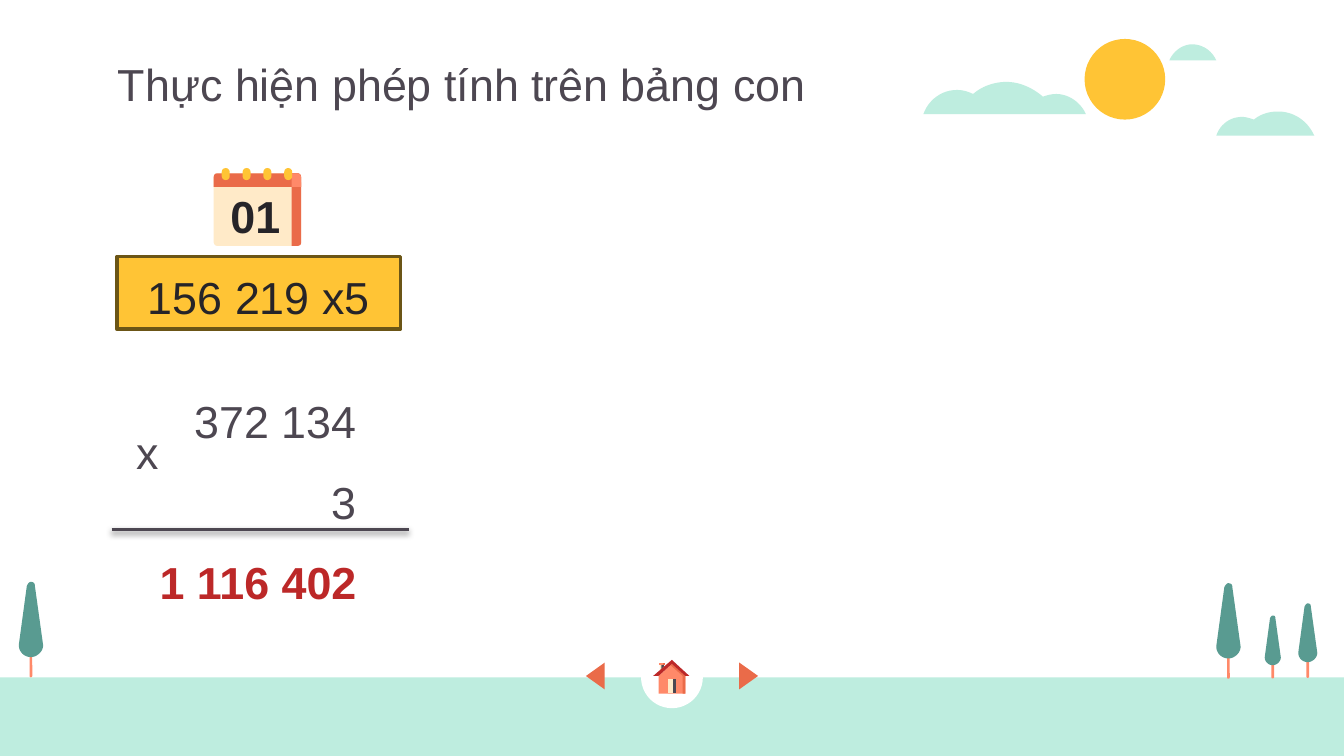
from pptx import Presentation
from pptx.dml.color import RGBColor
from pptx.enum.shapes import MSO_CONNECTOR, MSO_SHAPE as Shape
from pptx.enum.text import MSO_ANCHOR as Anchor, PP_ALIGN as Align
from pptx.oxml import parse_xml
from pptx.util import Inches, Pt

MINT, YELLOW, CREAM, WHITE = "BEEDDF", "FFC435", "FFEAC8", "FFFFFF"
CORAL, ORANGE, RED, GREEN = "FF8969", "EA6B49", "BC2828", "599B91"
GREY, INK, OLIVE = "4D4751", "262428", "6B5516"
DRAWING_NS = "http://schemas.openxmlformats.org/drawingml/2006/main"

CLOUDS = [
    [(7.49, 0.61), (7.4, 0.61, 7.31, 0.64, 7.24, 0.7),
     (7.2, 0.68, 7.16, 0.67, 7.12, 0.67), (7.01, 0.67, 6.91, 0.74, 6.87, 0.85),
     (8.08, 0.85), (8.04, 0.76, 7.95, 0.7, 7.86, 0.7),
     (7.82, 0.7, 7.79, 0.71, 7.76, 0.72), (7.68, 0.65, 7.58, 0.61, 7.49, 0.61)],
    [(8.87, 0.33), (8.8, 0.33, 8.73, 0.38, 8.7, 0.45),
     (9.05, 0.45), (9.02, 0.38, 8.95, 0.33, 8.87, 0.33)],
    [(9.51, 0.83), (9.44, 0.83, 9.38, 0.85, 9.33, 0.89),
     (9.3, 0.88, 9.27, 0.87, 9.24, 0.87), (9.16, 0.87, 9.08, 0.92, 9.05, 1.01),
     (9.78, 1.01), (9.73, 0.9, 9.63, 0.83, 9.51, 0.83)],
]
CROWN = [(0, 0), (-0.01, 0, -0.02, 0.01, -0.03, 0.03), (-0.09, 0.47),
         (-0.09, 0.52, -0.05, 0.56, 0, 0.56), (0.05, 0.56, 0.1, 0.51, 0.09, 0.46),
         (0.03, 0.03), (0.03, 0.01, 0.02, 0, 0, 0)]
TREES = [(9.47, 4.58, 0.66), (9.73, 4.49, 0.78), (0.23, 4.33, 1), (9.14, 4.34, 1)]
HOUSE = [
    (CREAM, [(4.91, 4.95), (4.91, 4.99), (4.94, 4.96), (4.94, 4.95)]),
    (GREY, [(4.92, 4.95), (4.92, 4.98), (4.94, 4.96), (4.94, 4.95)]),
    (CORAL, [(5, 4.94), (4.9, 5.03), (4.9, 5.16), (5.1, 5.16), (5.1, 5.03)]),
    (ORANGE, [(5, 4.94), (4.99, 4.95), (5.08, 5.03), (5.08, 5.16), (5.1, 5.16),
              (5.1, 5.03)]),
    (CORAL, [(4.9, 4.93), (4.9, 4.95), (4.95, 4.95), (4.95, 4.93)]),
    (CREAM, [(4.97, 5.05), (4.97, 5.16), (5.03, 5.16), (5.03, 5.05)]),
    (GREY, [(5.01, 5.05), (5.01, 5.16), (5.03, 5.16), (5.03, 5.05)]),
    (RED, [(5, 4.91), (4.86, 5.03), (4.9, 5.03), (5, 4.94), (5.1, 5.03),
           (5.13, 5.03)]),
    (ORANGE, [(4.93, 4.93), (4.93, 4.95), (4.95, 4.95), (4.95, 4.93)]),
]
CALENDAR_SIDE = [(2.17, 1.29), (2.17, 1.83), (2.21, 1.83),
                 (2.23, 1.83, 2.24, 1.82, 2.24, 1.81), (2.24, 1.32),
                 (2.24, 1.3, 2.23, 1.29, 2.21, 1.29)]


def color(value):
    """Turn a hex string into a colour."""
    return RGBColor.from_string(value)


def set_format(target, values):
    """Set each named attribute on the target."""
    for name, value in values.items():
        setattr(target, name, value)


def paint(shape, fill):
    """Give a shape a flat fill with no line or shadow."""
    shape.shadow.inherit = False
    shape.fill.solid()
    shape.fill.fore_color.rgb = color(fill)
    shape.line.fill.background()


def add_preset(shapes, kind, area, fill, rotation=0, roundness=None):
    """Add a flat preset shape."""
    shape = shapes.add_shape(kind, *map(Inches, area))
    paint(shape, fill)
    shape.rotation = rotation
    if roundness is not None:
        shape.adjustments[0] = roundness


def trace(path, steps=12):
    """Turn a path of points and cubic curves into plain points."""
    points = []
    for segment in path:
        if len(segment) == 2:
            points.append(segment)
            continue
        nodes = [points[-1], segment[:2], segment[2:4], segment[4:]]
        for step in range(1, steps + 1):
            t = step / steps
            weights = ((1 - t) ** 3, 3 * t * (1 - t) ** 2, 3 * t * t * (1 - t), t ** 3)
            points.append(tuple(sum(w * node[axis] for w, node in zip(weights, nodes))
                                for axis in (0, 1)))
    return points


def add_outline(shapes, path, fill, origin=(0, 0), scale=1):
    """Add a flat closed outline, moved and scaled."""
    points = [(Inches(origin[0] + x * scale), Inches(origin[1] + y * scale))
              for x, y in trace(path)]
    builder = shapes.build_freeform(*points[0], scale=1.0)
    builder.add_line_segments(points[1:], close=True)
    paint(builder.convert_to_shape(), fill)


def add_text(shapes, area, lines, align=Align.LEFT, spacing=1.0, anchor=Anchor.TOP):
    """Add a text box with one paragraph for each (text, colour, bold)."""
    box = shapes.add_textbox(*map(Inches, area))
    frame = box.text_frame
    set_format(frame, {"word_wrap": True, "vertical_anchor": anchor,
                       **{f"margin_{side}": Inches(0.1)
                          for side in ("left", "top", "right", "bottom")}})
    for index, (text, ink, bold) in enumerate(lines):
        para = frame.add_paragraph() if index else frame.paragraphs[0]
        set_format(para, {"alignment": align, "line_spacing": spacing})
        span = para.add_run()
        span.text = text
        set_format(span.font, {"name": "Arial", "size": Pt(24), "bold": bold})
        span.font.color.rgb = color(ink)
    return box


def add_tree(shapes, center, top, scale):
    """Add a tree of a trunk and a crown."""
    tree = shapes.add_group_shape().shapes
    trunk = (center - 0.01, top + 0.53 * scale, 0.02, 0.18 * scale)
    add_preset(tree, Shape.ROUNDED_RECTANGLE, trunk, CORAL, roundness=0.5)
    add_outline(tree, CROWN, GREEN, (center, top), scale)


def add_home_button(shapes):
    """Add the round button with a house."""
    button = shapes.add_group_shape().shapes
    add_preset(button, Shape.OVAL, (4.77, 4.81, 0.46, 0.46), WHITE)
    for fill, path in HOUSE:
        add_outline(button, path, fill)


def add_calendar(shapes):
    """Add the calendar page with its number."""
    page = shapes.add_group_shape().shapes
    add_preset(page, Shape.ROUNDED_RECTANGLE, (1.59, 1.29, 0.65, 0.54), CREAM, roundness=0.05)
    add_outline(page, CALENDAR_SIDE, ORANGE)
    add_preset(page, Shape.ROUND_2_SAME_RECTANGLE, (1.59, 1.29, 0.65, 0.1), ORANGE,
               roundness=0.25)
    add_preset(page, Shape.ROUND_1_RECTANGLE, (2.17, 1.29, 0.07, 0.1), CORAL, roundness=0.4)
    for index in range(4):
        ring = (1.65 + index * 0.155, 1.25, 0.06, 0.09)
        add_preset(page, Shape.ROUNDED_RECTANGLE, ring, YELLOW, roundness=0.5)
    add_text(page, (1.55, 1.47, 0.7, 0.27), [("01", INK, True)], Align.CENTER,
             anchor=Anchor.MIDDLE)


def add_sum_line(shapes):
    """Add the line above the result, with a soft shadow."""
    line = shapes.add_connector(MSO_CONNECTOR.STRAIGHT, *map(Inches, (0.83, 3.94, 3.04, 3.94)))
    line.line.color.rgb = color(GREY)
    line.line.width = Pt(2)
    line._element.spPr.append(parse_xml(
        f'<a:effectLst xmlns:a="{DRAWING_NS}">'
        f'<a:outerShdw blurRad="{Pt(3.1)}" dist="{Pt(1.6)}" dir="5400000" rotWithShape="0">'
        '<a:srgbClr val="000000"><a:alpha val="38000"/></a:srgbClr>'
        '</a:outerShdw></a:effectLst>'))


def main():
    """Build the slide and save it."""
    deck = Presentation()
    set_format(deck, {"slide_width": Inches(10), "slide_height": Inches(10) * 9 // 16})
    shapes = deck.slides.add_slide(deck.slide_layouts[6]).shapes
    for cloud in CLOUDS:
        add_outline(shapes, cloud, MINT)
    add_preset(shapes, Shape.RECTANGLE, (-0.03, 5.04, 10.06, 0.59), MINT)
    add_preset(shapes, Shape.OVAL, (8.07, 0.29, 0.6, 0.6), YELLOW)
    add_text(shapes, (1.04, 2.63, 1.71, 0.51),
             [("372 134", GREY, False), ("3", GREY, False), ("1 116 402", RED, True)],
             Align.RIGHT, 1.5)
    task = add_text(shapes, (0.87, 1.91, 2.11, 0.54), [("156 219 x5", INK, False)], Align.CENTER)
    paint(task, YELLOW)
    task.line.color.rgb = color(OLIVE)
    task.line.width = Pt(2)
    add_text(shapes, (0.78, 0.32, 5.97, 0.51),
             [("Thực hiện phép tính trên bảng con", GREY, False)])
    add_home_button(shapes)
    for left, rotation in ((4.33, 270), (5.47, 90)):
        add_preset(shapes, Shape.ISOSCELES_TRIANGLE, (left, 4.96, 0.2, 0.14), ORANGE, rotation)
    add_calendar(shapes)
    for tree in TREES:
        add_tree(shapes, *tree)
    add_text(shapes, (0.92, 3.06, 0.31, 0.46), [("x", GREY, False)], Align.RIGHT)
    add_sum_line(shapes)
    deck.save("out.pptx")


if __name__ == "__main__":
    main()
